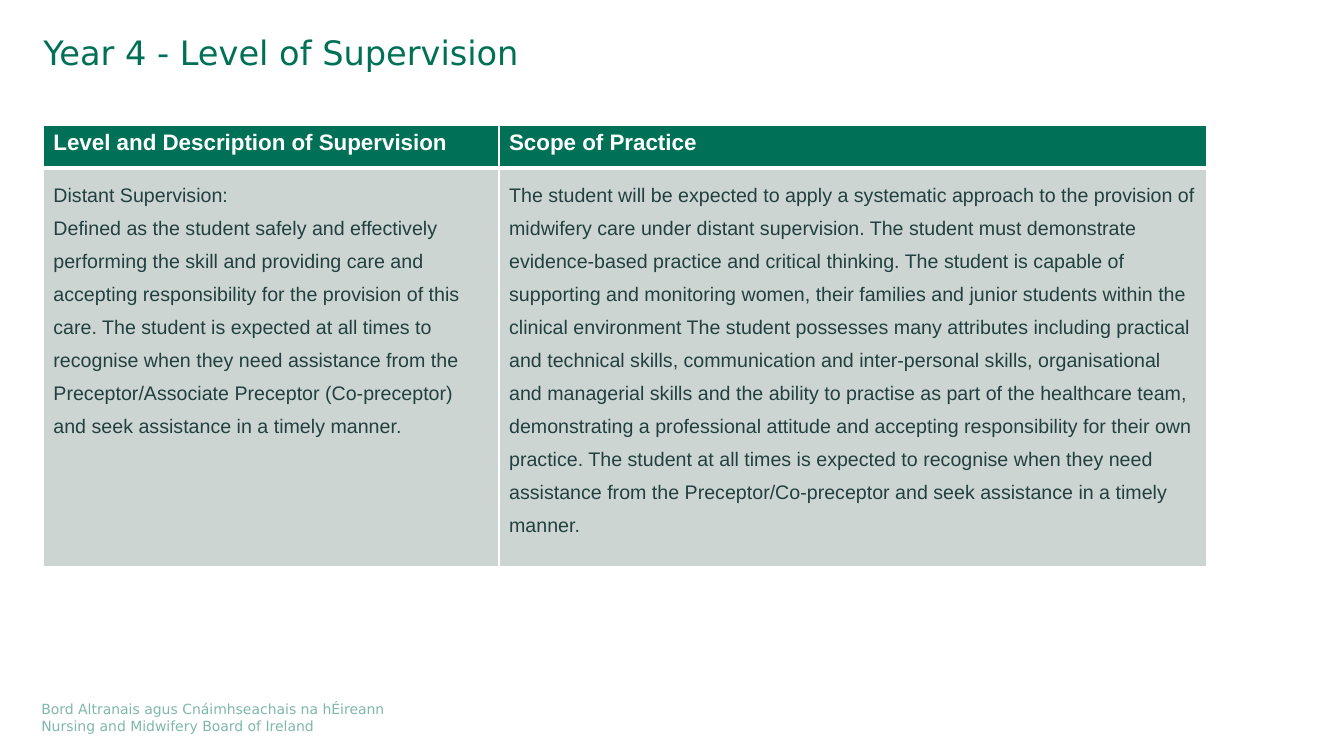
import pptx
import pptx.dml.color
import pptx.oxml.ns
import pptx.util
from lxml import etree

Inches = pptx.util.Inches
Pt = pptx.util.Pt
COLORS = {"green": "007156", "ink": "224040", "sage": "CCD5D1", "white": "FFFFFF"}


def write(tf, lines, size, font, color, bold=False, spacing=None):
    tf.word_wrap = True
    tf.text = "\n".join(lines)
    for p in tf.paragraphs:
        if spacing:
            p.line_spacing = spacing
        for r in p.runs:
            r.font.size = Pt(size)
            r.font.name = font
            r.font.bold = bold
            r.font.color.rgb = pptx.dml.color.RGBColor.from_string(COLORS[color])


def add_text(left, top, width, height, lines, size, spacing=None):
    box = s.shapes.add_textbox(Inches(left), Inches(top), Inches(width), Inches(height))
    tf = box.text_frame
    tf.margin_left = tf.margin_top = tf.margin_right = tf.margin_bottom = 0
    write(tf, lines, size, "DejaVu Sans", "green", spacing=spacing)
    return tf


prs = pptx.Presentation()
prs.slide_width = Inches(13.33)
prs.slide_height = Inches(7.5)
s = prs.slides.add_slide(prs.slide_layouts[6])

footer = add_text(0.41, 6.95, 4.39, 0.34, [
    "Bord Altranais agus Cnáimhseachais na hÉireann",
    "Nursing and Midwifery Board of Ireland",
], 10)
qn = pptx.oxml.ns.qn
for color in footer._txBody.iter(qn("a:srgbClr")):
    etree.SubElement(color, qn("a:alpha"), val="50000")

add_text(0.43, 0.36, 12.46, 0.52, ["Year 4 - Level of Supervision"], 24, 0.9)

rows = [
    [["Level and Description of Supervision"], ["Scope of Practice"]],
    [
        [
            "Distant Supervision:",
            "Defined as the student safely and effectively performing the skill and "
            "providing care and accepting responsibility for the provision of this care. "
            "The student is expected at all times to recognise when they need assistance "
            "from the Preceptor/Associate Preceptor (Co-preceptor) and seek assistance "
            "in a timely manner.",
        ],
        [
            "The student will be expected to apply a systematic approach to the provision "
            "of midwifery care under distant supervision. The student must demonstrate "
            "evidence-based practice and critical thinking. The student is capable of "
            "supporting and monitoring women, their families and junior students within "
            "the clinical environment The student possesses many attributes including "
            "practical and technical skills, communication and inter-personal skills, "
            "organisational and managerial skills and the ability to practise as part of "
            "the healthcare team, demonstrating a professional attitude and accepting "
            "responsibility for their own practice. The student at all times is expected "
            "to recognise when they need assistance from the Preceptor/Co-preceptor and "
            "seek assistance in a timely manner.",
        ],
    ],
]
row_styles = [
    {"height": 0.43, "fill": "green", "size": 16, "color": "white", "bold": True,
     "spacing": None, "borders": {"L": 1, "R": 1, "T": 1, "B": 3}},
    {"height": 3.7, "fill": "sage", "size": 14, "color": "ink", "bold": False,
     "spacing": 1.5, "borders": {"L": 1, "R": 1, "T": 3, "B": 1}},
]

table = s.shapes.add_table(2, 2, Inches(0.43), Inches(1.24), Inches(11.54), Inches(4.13)).table
table.horz_banding = False
for column, width in zip(table.columns, [4.52, 7.02]):
    column.width = Inches(width)

for i, (texts, style) in enumerate(zip(rows, row_styles)):
    table.rows[i].height = Inches(style["height"])
    for j, lines in enumerate(texts):
        cell = table.cell(i, j)
        tcPr = cell._tc.get_or_add_tcPr()
        for side, weight in style["borders"].items():
            ln = etree.SubElement(tcPr, qn("a:ln" + side), w=str(Pt(weight)))
            solid = etree.SubElement(ln, qn("a:solidFill"))
            etree.SubElement(solid, qn("a:srgbClr"), val=COLORS["white"])
        cell.fill.solid()
        cell.fill.fore_color.rgb = pptx.dml.color.RGBColor.from_string(COLORS[style["fill"]])
        write(cell.text_frame, lines, style["size"], "Arial", style["color"],
              style["bold"], style["spacing"])

prs.save("out.pptx")
